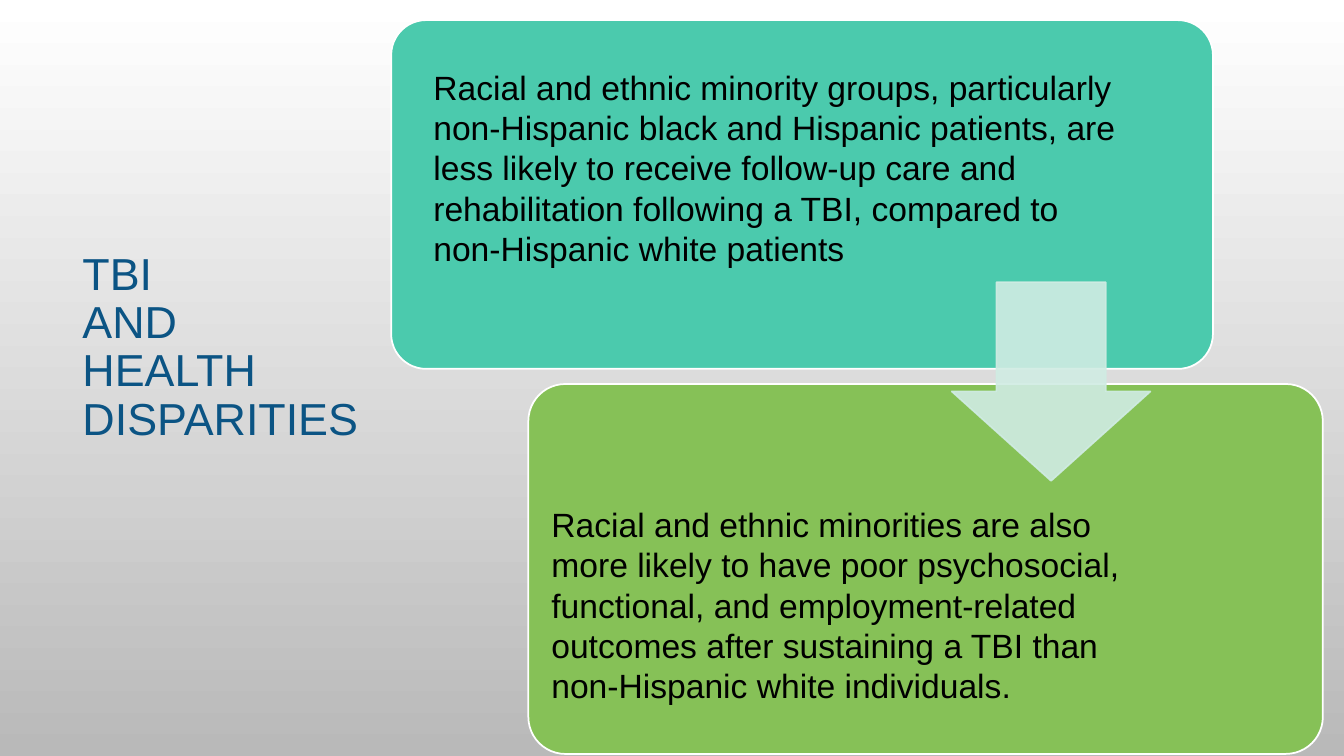
from lxml import etree
from pptx import Presentation
from pptx.dml.color import RGBColor
from pptx.enum.shapes import MSO_SHAPE
from pptx.enum.text import MSO_ANCHOR
from pptx.oxml.ns import qn
from pptx.util import Inches, Pt

ROUND_RECT = MSO_SHAPE.ROUNDED_RECTANGLE
DOWN_ARROW = MSO_SHAPE.DOWN_ARROW
MIDDLE, TOP = MSO_ANCHOR.MIDDLE, MSO_ANCHOR.TOP

FONT = "Arial"
COLORS = {
    "white": "FFFFFF",
    "grey": "B9B9B9",
    "title": "0B5484",
    "text": "000000",
    "teal": "4BCAAD",
    "green": "86C157",
    "arrow": "D0ECE3",
}

TITLE = "TBI\vAND\vHEALTH\vDISPARITIES"
CARE = ("Racial and ethnic minority groups, particularly non-Hispanic black and "
        "Hispanic patients, are less likely to receive follow-up care and "
        "rehabilitation following a TBI, compared to non-Hispanic white patients")
OUTCOMES = ("Racial and ethnic minorities are also more likely to have poor "
            "psychosocial, functional, and employment-related outcomes after "
            "sustaining a TBI than non-Hispanic white individuals.")


def rgb(name):
    return RGBColor.from_string(COLORS[name])


def add_background(slide):
    fill = slide.background.fill
    fill.gradient()
    fill.gradient_angle = 270  # runs from top to bottom
    for stop, name in zip(fill.gradient_stops, ("white", "grey")):
        stop.color.rgb = rgb(name)


def add_text(slide, box, text, size, color, anchor=TOP, spacing=1.0):
    tf = slide.shapes.add_textbox(*map(Inches, box)).text_frame
    tf.word_wrap = True
    tf.vertical_anchor = anchor
    p = tf.paragraphs[0]
    p.text = text
    p.line_spacing = spacing
    for r in p.runs:
        r.font.name = FONT
        r.font.size = Pt(size)
        r.font.color.rgb = rgb(color)


def add_panel(slide, kind, box, adjustments, fill, line):
    sp = slide.shapes.add_shape(kind, *map(Inches, box))
    sp.shadow.inherit = False
    for i, value in enumerate(adjustments):
        sp.adjustments[i] = value
    sp.fill.solid()
    sp.fill.fore_color.rgb = rgb(fill)
    sp.line.color.rgb = rgb(line)
    sp.line.width = Pt(1.25)
    return sp


def add_card(slide, box, fill):
    add_panel(slide, ROUND_RECT, box, [0.1], fill, "white")


def add_card_text(slide, box, inset, text):
    """Place text in a card; inset is left, top, width, height."""
    left, top = box[:2]
    dx, dy, width, height = inset
    add_text(slide, (left + dx, top + dy, width, height), text, 24, "text")


def add_arrow(slide, box):
    sp = add_panel(slide, DOWN_ARROW, box, [0.55, 0.45], "arrow", "arrow")
    # Slightly see-through fill and outline
    for color in sp._element.spPr.iter(qn("a:srgbClr")):
        etree.SubElement(color, qn("a:alpha")).set("val", "90000")


def build_slide(prs):
    slide = prs.slides.add_slide(prs.slide_layouts[6])
    add_background(slide)

    # Title on the left
    add_text(slide, (0.72, 0.47, 3.1, 5.97), TITLE, 32, "title", MIDDLE, 0.9)

    # Two overlapping steps joined by an arrow
    care_box = (3.88, 0.2, 8.15, 3.46)
    outcomes_box = (5.24, 3.81, 7.88, 3.67)
    add_card(slide, care_box, "teal")
    add_card(slide, outcomes_box, "green")
    add_arrow(slide, (9.44, 2.8, 1.97, 1.97))
    add_card_text(slide, care_box, (0.32, 0.41, 6.98, 2.52), CARE)
    add_card_text(slide, outcomes_box, (0.13, 1.14, 6.22, 2.42), OUTCOMES)


def main():
    prs = Presentation()
    prs.slide_width = Inches(13.33)
    prs.slide_height = Inches(7.5)
    build_slide(prs)
    prs.save("out.pptx")


if __name__ == "__main__":
    main()
